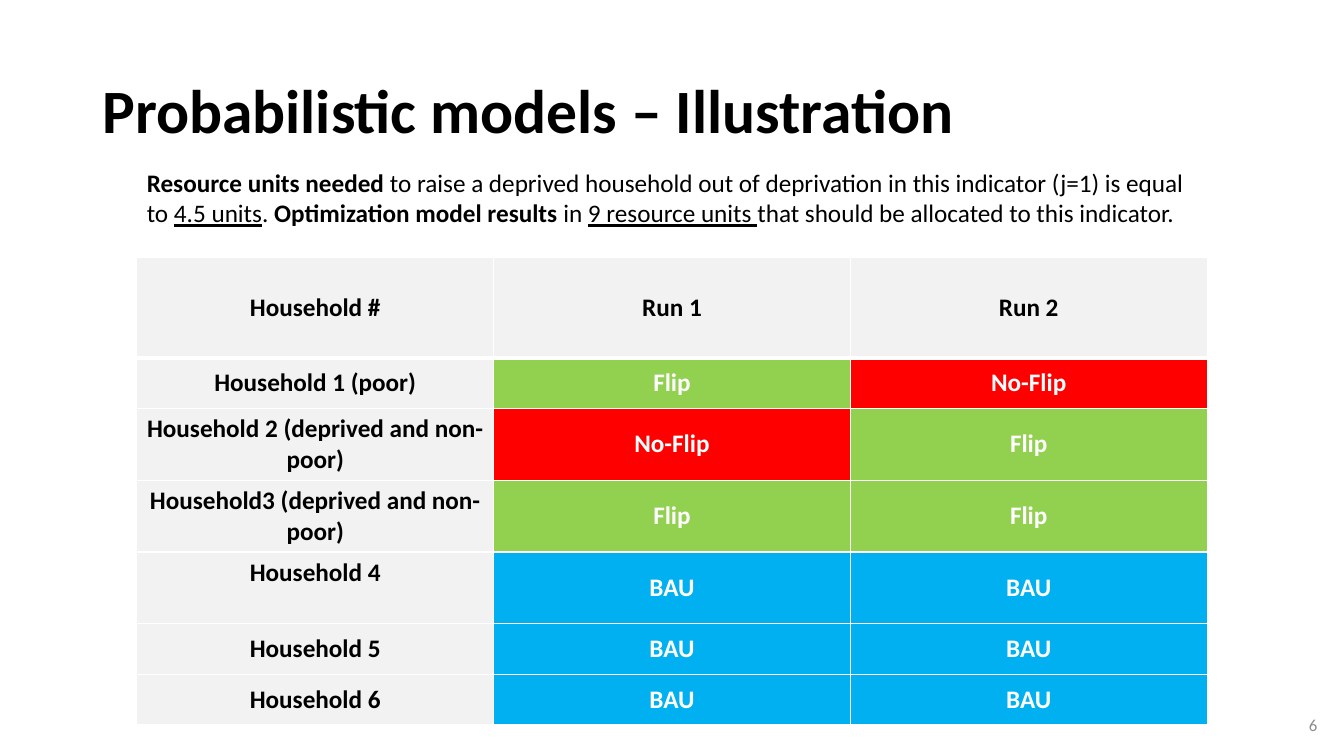
from lxml import etree
from pptx import Presentation
from pptx import util as u
from pptx.dml.color import RGBColor
from pptx.enum import text
from pptx.oxml.ns import qn

BLACK, WHITE, GREY, PALE = "000000", "FFFFFF", "8C8C8C", "F2F2F2"
OUTCOME_FILLS = {"Flip": "92D050", "No-Flip": "FF0000", "BAU": "00B0F0"}
HEADER = ["Household #", "Run 1", "Run 2"]
HOUSEHOLDS = [
    ["Household 1 (poor)", "Flip", "No-Flip"],
    ["Household 2 (deprived and non-poor)", "No-Flip", "Flip"],
    ["Household3 (deprived and non-poor)", "Flip", "Flip"],
    ["Household 4", "BAU", "BAU"],
    ["Household 5", "BAU", "BAU"],
    ["Household 6", "BAU", "BAU"],
]
ROW_HEIGHTS = [2.54, 1.27, 1.81, 1.81, 1.81, 1.27, 1.27]
COLUMN_WIDTH = 8.99
TABLE_LEFT, TABLE_TOP = 3.45, 6.48
BOLD, UNDERLINE = {"bold": True}, {"underline": True}
ALIGN, ANCHOR = text.PP_ALIGN, text.MSO_ANCHOR


def colour(value):
    return RGBColor.from_string(value)


class SlideBuilder:
    font_name = "Calibri"

    def __init__(self, slide):
        self.slide = slide

    def add_spans(self, para, spans, size, ink, align):
        """Fill a paragraph with (wording, font settings) spans."""
        para.alignment = align
        for wording, settings in spans:
            span = para.add_run()
            span.text = wording
            span.font.color.rgb = colour(ink)
            font_values = {"name": self.font_name, "size": u.Pt(size), **settings}
            for name, value in font_values.items():
                setattr(span.font, name, value)

    def text_box(self, place, spans, size, ink=BLACK, align=ALIGN.LEFT,
                 anchor=ANCHOR.MIDDLE, line_spacing=None):
        box = self.slide.shapes.add_textbox(*map(u.Cm, place))
        frame = box.text_frame
        frame.word_wrap = True
        frame.vertical_anchor = anchor
        para = frame.paragraphs[0]
        para.line_spacing = line_spacing
        self.add_spans(para, spans, size, ink, align)

    def table(self, left, top, column_width, row_heights, rows):
        width = column_width * len(rows[0])
        frame = self.slide.shapes.add_table(
            len(rows), len(rows[0]),
            *map(u.Cm, (left, top, width, sum(row_heights))))
        grid = frame.table
        for column in grid.columns:
            column.width = u.Cm(column_width)
        for row, height in zip(grid.rows, row_heights):
            row.height = u.Cm(height)
        for row_index, row in enumerate(rows):
            for column_index, wording in enumerate(row):
                self.cell(grid.cell(row_index, column_index), wording, row_index)

    def cell(self, cell, wording, row_index):
        cell.fill.solid()
        cell.fill.fore_color.rgb = colour(OUTCOME_FILLS.get(wording, PALE))
        raised = wording == "Household 4"
        cell.vertical_anchor = ANCHOR.TOP if raised else ANCHOR.MIDDLE
        ink = WHITE if wording in OUTCOME_FILLS else BLACK
        self.add_spans(cell.text_frame.paragraphs[0], [(wording, BOLD)], 18, ink,
                       ALIGN.CENTER)
        self.borders(cell, top=3 if row_index == 1 else 1,
                     bottom=3 if row_index == 0 else 1)

    def borders(self, cell, top, bottom):
        """Draw white cell edges; widths are in points."""
        properties = cell._tc.get_or_add_tcPr()
        edges = {"a:lnL": 1, "a:lnR": 1, "a:lnT": top, "a:lnB": bottom}
        for position, (tag, width) in enumerate(edges.items()):
            line = etree.Element(qn(tag), w=str(u.Pt(width)))
            fill = etree.SubElement(line, qn("a:solidFill"))
            etree.SubElement(fill, qn("a:srgbClr"), val=WHITE)
            properties.insert(position, line)


def main():
    deck = Presentation()
    deck.slide_width, deck.slide_height = u.Cm(33.87), u.Cm(19.05)
    page = SlideBuilder(deck.slides.add_slide(deck.slide_layouts[6]))

    page.text_box((2.33, 1.01, 29.21, 3.68),
                  [("Probabilistic models – Illustration", BOLD)], 44,
                  line_spacing=0.9)
    page.text_box((25.83, 17.75, 7.62, 1.01), [("6", {})], 12, GREY, ALIGN.RIGHT)
    page.table(TABLE_LEFT, TABLE_TOP, COLUMN_WIDTH, ROW_HEIGHTS,
               [HEADER, *HOUSEHOLDS])
    page.text_box((TABLE_LEFT, 4.09, 26.97, 1.8), [
        ("Resource units needed ", BOLD),
        ("to raise a deprived household out of deprivation in this indicator "
         "(j=1) is equal to ", {}),
        ("4.5 units", UNDERLINE),
        (". ", {}),
        ("Optimization model results ", BOLD),
        ("in ", {}),
        ("9 resource units ", UNDERLINE),
        ("that should be allocated to this indicator.", {}),
    ], 18, anchor=ANCHOR.TOP)

    deck.save("out.pptx")


if __name__ == "__main__":
    main()
